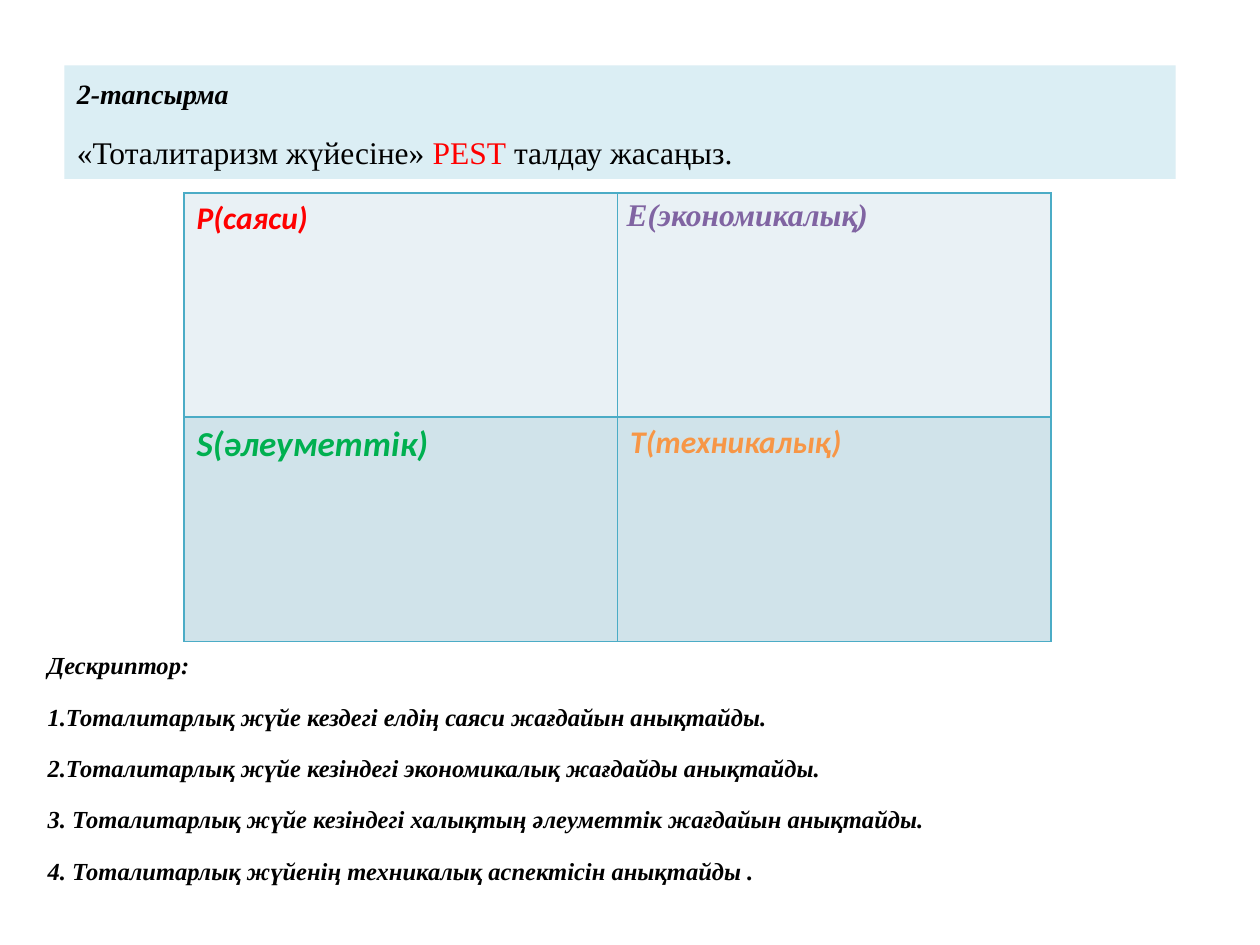
from dataclasses import dataclass

from lxml import etree
from pptx import Presentation
from pptx.dml.color import RGBColor
from pptx.enum.shapes import MSO_SHAPE
from pptx.enum.text import MSO_ANCHOR, MSO_AUTO_SIZE, PP_ALIGN
from pptx.oxml.ns import qn
from pptx.util import Cm, Pt

RECTANGLE = MSO_SHAPE.RECTANGLE
TOP = MSO_ANCHOR.TOP
GROW = MSO_AUTO_SIZE.SHAPE_TO_FIT_TEXT
JUSTIFY = PP_ALIGN.JUSTIFY


@dataclass(frozen=True)
class Theme:
    serif: str = "Times New Roman"
    sans: str = "Calibri"
    black: str = "000000"
    red: str = "FF0000"
    purple: str = "8064A2"
    green: str = "00B050"
    orange: str = "F79646"
    heading_fill: str = "DBEEF4"
    row_fills: tuple = ("E9F1F5", "D0E3EA")
    border: str = "4BACC6"
    border_width: int = 1
    small: int = 14
    label: int = 16
    body: int = 18
    large: int = 20


THEME = Theme()


def style(size, color=THEME.black, name=THEME.serif, strong=True):
    return {"size": Pt(size), "name": name, "bold": strong, "italic": strong, "color": color}


PLAIN = style(THEME.body, strong=False)
DESCRIPTOR = style(THEME.small)
SPACED = {"alignment": JUSTIFY, "line_spacing": 1.15, "space_after": Pt(10)}
JUSTIFIED = {"alignment": JUSTIFY, "line_spacing": 1.15}
TIGHT = {"margin_left": Cm(0.18), "margin_right": Cm(0.18), "margin_top": 0, "margin_bottom": 0}

HEADING_BOX = (1.3, 1.32, 22.4, 2.29)
TABLE_BOX = (3.71, 3.89, 17.48, 9.04)
DESCRIPTOR_BOX = (0.71, 12.9, 24.21, 5.13)

HEADING = [
    [("2-тапсырма", style(THEME.label))],
    [
        ("«Тоталитаризм жүйесіне» ", PLAIN),
        ("PEST", {**PLAIN, "color": THEME.red}),
        (" талдау жасаңыз.", PLAIN),
    ],
]
PEST = [
    [
        ("P(саяси)", style(THEME.body, THEME.red, THEME.sans), {}, {}),
        ("E(экономикалық)", style(THEME.body, THEME.purple), JUSTIFIED, TIGHT),
    ],
    [
        ("S(әлеуметтік)", style(THEME.large, THEME.green, THEME.sans), {}, {}),
        ("T(техникалық)", style(THEME.body, THEME.orange, THEME.sans), {}, {}),
    ],
]
DESCRIPTORS = [
    "Дескриптор:",
    "1.Тоталитарлық жүйе кездегі елдің саяси жағдайын анықтайды.",
    "2.Тоталитарлық жүйе кезіндегі экономикалық жағдайды анықтайды.",
    "3. Тоталитарлық жүйе кезіндегі халықтың әлеуметтік жағдайын анықтайды.",
    "4. Тоталитарлық жүйенің техникалық аспектісін анықтайды .",
]


def apply(target, values):
    for name, value in values.items():
        setattr(target, name, value)


def lengths(box):
    return [Cm(value) for value in box]


def paint(target, color):
    target.fill.solid()
    target.fill.fore_color.rgb = RGBColor.from_string(color)


def write(text_frame, paragraphs, paragraph_format):
    for index, runs in enumerate(paragraphs):
        paragraph = text_frame.add_paragraph() if index else text_frame.paragraphs[0]
        apply(paragraph, paragraph_format)
        for text, values in runs:
            run = paragraph.add_run()
            run.text = text
            apply(run.font, {key: value for key, value in values.items() if key != "color"})
            run.font.color.rgb = RGBColor.from_string(values["color"])


def add_borders(cell):
    properties = cell._tc.get_or_add_tcPr()
    for index, side in enumerate(("a:lnL", "a:lnR", "a:lnT", "a:lnB")):
        line = etree.Element(qn(side), w=str(Pt(THEME.border_width)))
        fill = etree.SubElement(line, qn("a:solidFill"))
        etree.SubElement(fill, qn("a:srgbClr"), val=THEME.border)
        properties.insert(index, line)


def add_heading(slide):
    shape = slide.shapes.add_shape(RECTANGLE, *lengths(HEADING_BOX))
    shape.shadow.inherit = False
    paint(shape, THEME.heading_fill)
    shape.line.fill.background()
    apply(shape.text_frame, {"word_wrap": True, "auto_size": GROW, "vertical_anchor": TOP})
    write(shape.text_frame, HEADING, SPACED)


def add_pest_table(slide):
    left, top, width, height = lengths(TABLE_BOX)
    table = slide.shapes.add_table(len(PEST), len(PEST[0]), left, top, width, height).table
    apply(table, {"first_row": False, "horz_banding": False})
    for row_index, row in enumerate(PEST):
        for column_index, (text, font, paragraph_format, margins) in enumerate(row):
            cell = table.cell(row_index, column_index)
            paint(cell, THEME.row_fills[row_index])
            apply(cell, margins)
            add_borders(cell)
            write(cell.text_frame, [[(text, font)]], paragraph_format)


def add_descriptors(slide):
    text_frame = slide.shapes.add_textbox(*lengths(DESCRIPTOR_BOX)).text_frame
    apply(text_frame, {"word_wrap": True, "auto_size": GROW})
    write(text_frame, [[(text, DESCRIPTOR)] for text in DESCRIPTORS], SPACED)


def main():
    presentation = Presentation()
    apply(presentation, {"slide_width": Cm(25.4), "slide_height": Cm(19.05)})
    slide = presentation.slides.add_slide(presentation.slide_layouts[6])
    add_heading(slide)
    add_pest_table(slide)
    add_descriptors(slide)
    presentation.save("out.pptx")


if __name__ == "__main__":
    main()
